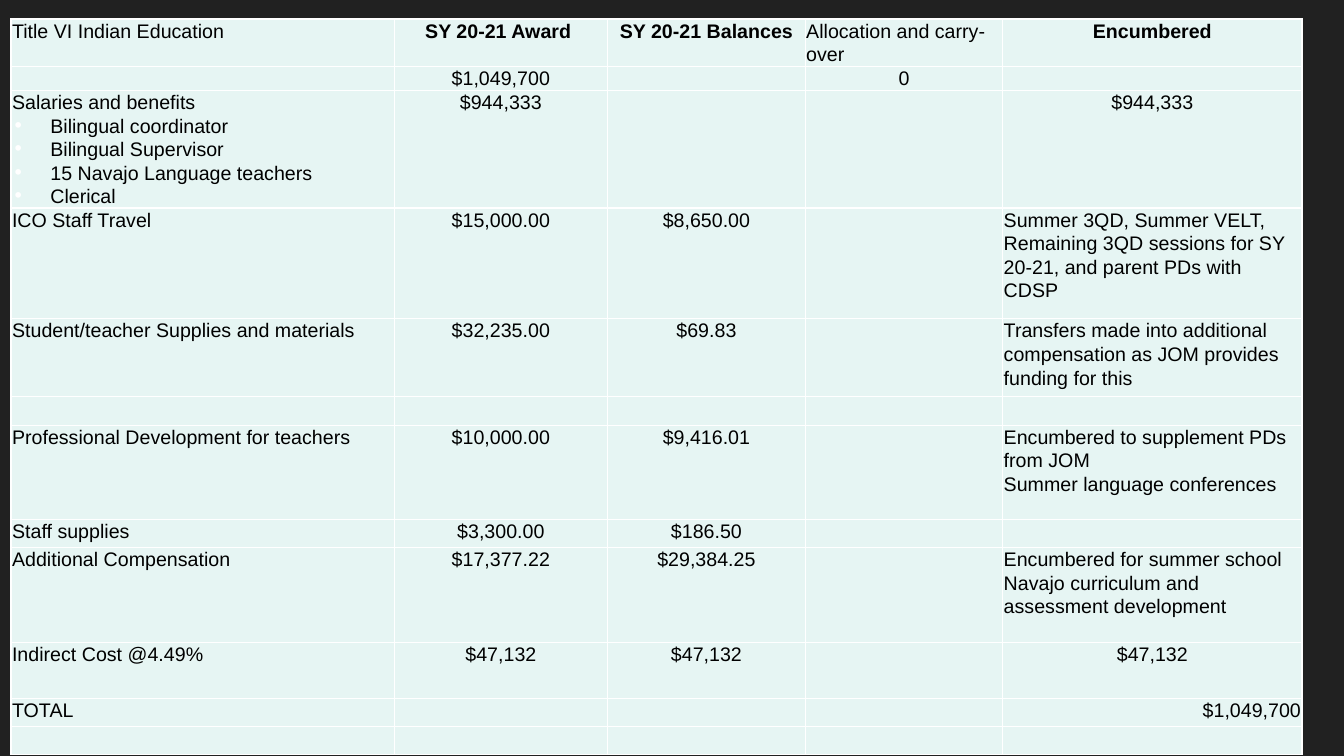
from lxml.etree import SubElement
from pptx import Presentation
from pptx.dml.color import RGBColor
from pptx.enum.text import PP_ALIGN as Align
from pptx.oxml.ns import qn
from pptx.util import Pt

BACKGROUND, CELL_FILL, BORDER, INK = "212121", "E6F5F3", "FFFFFF", "000000"
FONT, SIZE, INDENT = "Arial", 14, 27.36
COLUMN_WIDTHS = [273.6, 152.6, 141.1, 141.1, 213.8]
ROW_HEIGHTS = [33.9, 16.8, 84, 79, 55.7, 20.4, 67.5, 20, 67.9, 40, 19.8, 20.4]
BOLD_COLUMNS = (1, 2, 4)
BUDGET = [
    ["Title VI Indian Education", "SY 20-21 Award ", "SY 20-21 Balances",
     "Allocation and carry-over", "Encumbered"],
    ["", "$1,049,700", "", "0", ""],
    [["Salaries and benefits", "∙Bilingual coordinator", "∙Bilingual Supervisor",
      "∙15 Navajo Language teachers", "∙Clerical"], "$944,333", "", "", "$944,333"],
    ["ICO Staff Travel", "$15,000.00", "$8,650.00", "",
     "Summer 3QD, Summer VELT, Remaining 3QD sessions for SY 20-21, "
     "and parent PDs with CDSP"],
    ["Student/teacher Supplies and materials", "$32,235.00", "$69.83", "",
     "Transfers made into additional compensation as JOM provides funding for this"],
    [""] * 5,
    ["Professional Development for teachers", "$10,000.00", "$9,416.01", "",
     ["Encumbered to supplement PDs from JOM", "Summer language conferences"]],
    ["Staff supplies", "$3,300.00", "$186.50", "", ""],
    ["Additional Compensation", "$17,377.22", "$29,384.25", "",
     "Encumbered for summer school Navajo curriculum and assessment development"],
    ["Indirect Cost @4.49%", "$47,132", "$47,132", "", "$47,132"],
    ["TOTAL", "", "", "", "$1,049,700"],
    [""] * 5,
]


def color(value):
    """Return the colour for a hex string."""
    return RGBColor.from_string(value)


def add_solid_color(parent, tag, value):
    """Add an XML element that holds one colour."""
    SubElement(SubElement(parent, qn(tag)), qn("a:srgbClr"), val=value)


def format_cell(cell):
    """Set the insets, borders and fill of a cell."""
    cell.margin_left = cell.margin_right = Pt(0.72)
    cell.margin_top = cell.margin_bottom = Pt(0)
    properties = cell._tc.get_or_add_tcPr()
    for side in ("a:lnL", "a:lnR", "a:lnT", "a:lnB"):
        line = SubElement(properties, qn(side), w=str(Pt(1)))
        add_solid_color(line, "a:solidFill", BORDER)
    cell.fill.solid()
    cell.fill.fore_color.rgb = color(CELL_FILL)


def add_bullet(paragraph):
    """Give a paragraph a hanging bullet in the border colour."""
    properties = paragraph._p.get_or_add_pPr()
    properties.set("marL", str(Pt(INDENT)))
    properties.set("indent", str(-Pt(INDENT)))
    add_solid_color(properties, "a:buClr", BORDER)
    SubElement(properties, qn("a:buChar"), char="∙")


def write_paragraph(paragraph, text, alignment, bold):
    """Write one line of a cell, bulleted if it starts with a bullet."""
    paragraph.alignment = alignment
    paragraph.line_spacing = 1.07
    if not text:
        SubElement(paragraph._p, qn("a:endParaRPr"), sz=str(SIZE * 100))
        return
    if text.startswith("∙"):
        add_bullet(paragraph)
    run = paragraph.add_run()
    run.text = text.removeprefix("∙")
    run.font.name, run.font.size, run.font.bold = FONT, Pt(SIZE), bold
    run.font.color.rgb = color(INK)


def write_cell(cell, content, bold, is_total):
    """Write the lines of a cell, with amounts and bold headings centred."""
    lines = content if isinstance(content, list) else [content]
    alignment = Align.LEFT
    if is_total:
        alignment = Align.RIGHT
    elif bold or lines[0].startswith(("$", "0")):
        alignment = Align.CENTER
    for index, text in enumerate(lines):
        frame = cell.text_frame
        paragraph = frame.add_paragraph() if index else frame.paragraphs[0]
        write_paragraph(paragraph, text, alignment, bold)


def add_budget_table(slide, left, top):
    """Add the budget table with its top left corner at the given point."""
    table = slide.shapes.add_table(
        len(ROW_HEIGHTS), len(COLUMN_WIDTHS), Pt(left), Pt(top),
        Pt(sum(COLUMN_WIDTHS)), Pt(sum(ROW_HEIGHTS))).table
    table.first_row = table.horz_banding = False
    for column, width in zip(table.columns, COLUMN_WIDTHS):
        column.width = Pt(width)
    for row_index, (row, height) in enumerate(zip(table.rows, ROW_HEIGHTS)):
        row.height = Pt(height)
        label = BUDGET[row_index][0]
        for column_index, content in enumerate(BUDGET[row_index]):
            cell = table.cell(row_index, column_index)
            format_cell(cell)
            bold = row_index == 0 and column_index in BOLD_COLUMNS
            write_cell(cell, content, bold, label == "TOTAL" and column_index == 4)


def main():
    """Build and save the presentation."""
    presentation = Presentation()
    presentation.slide_width, presentation.slide_height = Pt(960), Pt(540)
    slide = presentation.slides.add_slide(presentation.slide_layouts[6])
    slide.background.fill.solid()
    slide.background.fill.fore_color.rgb = color(BACKGROUND)
    add_budget_table(slide, 7.9, 13.6)
    presentation.save("out.pptx")


if __name__ == "__main__":
    main()
